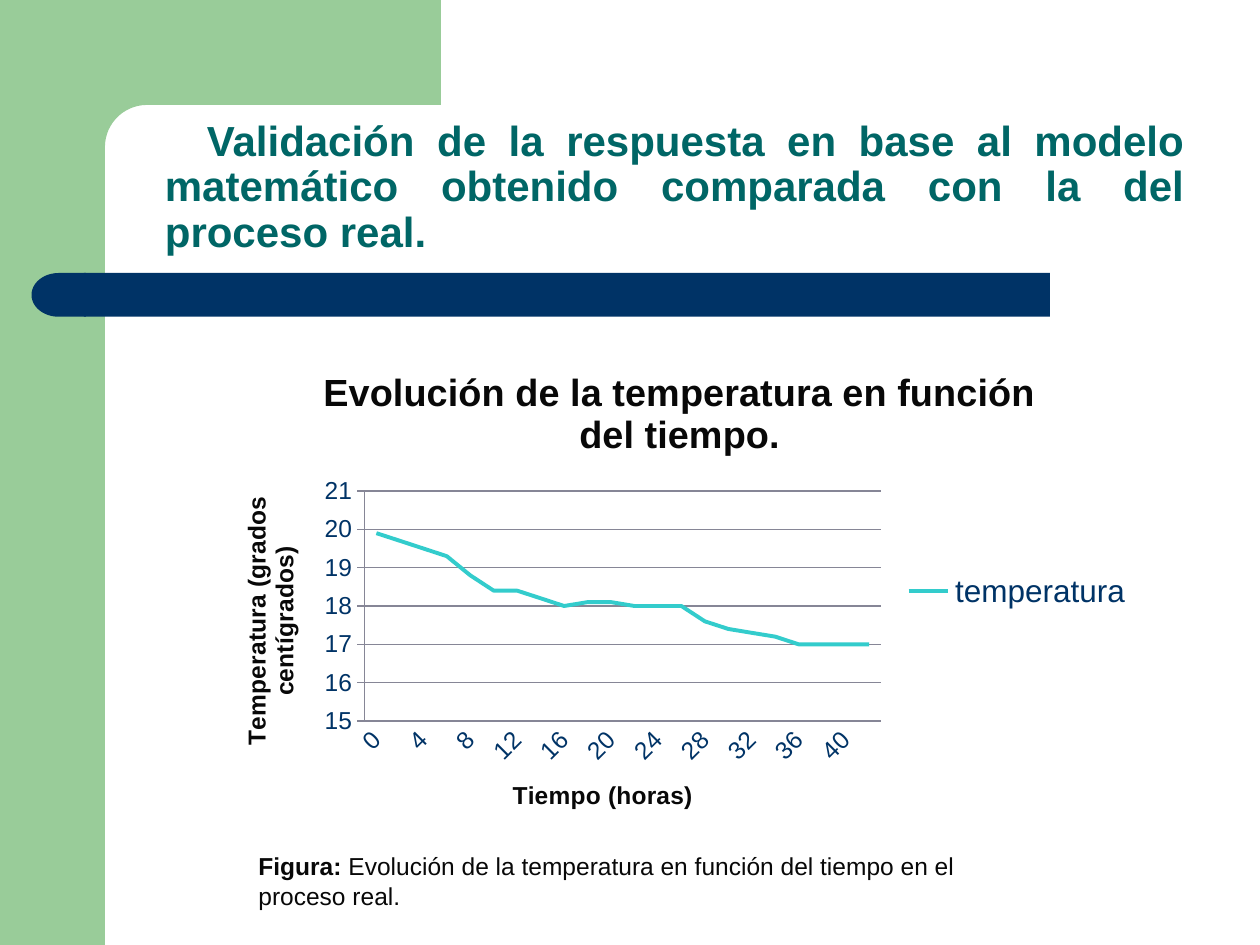
import math

from lxml import etree
from pptx import Presentation
from pptx import util as u
from pptx.chart import data
from pptx.dml.color import RGBColor
from pptx.enum import chart as charts, shapes, text
from pptx.oxml.ns import qn

COLORS = {
    "green": "99CC99",
    "navy": "003366",
    "teal": "006666",
    "turquoise": "33CCCC",
    "black": "080808",
    "grid": "868696",
}


class SlideBuilder:
    """Hold the style and the current slide, and add each kind of element."""

    def __init__(self, presentation, font="Arial"):
        self.font = font
        self.slide = presentation.slides.add_slide(presentation.slide_layouts[5])

    def color(self, name):
        return RGBColor.from_string(COLORS[name])

    def style(self, font, size, color, bold=False):
        font.name = self.font
        font.size = u.Pt(size)
        font.bold = bold
        font.color.rgb = self.color(color)

    def add_run(self, paragraph, words, size, color, bold=False):
        run = paragraph.add_run()
        run.text = words
        self.style(run.font, size, color, bold)

    def paint(self, shape, color):
        shape.shadow.inherit = False
        shape.fill.solid()
        shape.fill.fore_color.rgb = self.color(color)
        shape.line.fill.background()

    def block(self, kind, box, color, rotation=0):
        shape = self.slide.shapes.add_shape(kind, *map(u.Pt, box))
        shape.rotation = rotation
        self.paint(shape, color)

    def outline(self, points, color):
        points = [(u.Pt(x), u.Pt(y)) for x, y in points]
        builder = self.slide.shapes.build_freeform(*points[0])
        builder.add_line_segments(points[1:], close=True)
        self.paint(builder.convert_to_shape(), color)

    def title(self, words, box):
        shape = self.slide.shapes.title
        shape.left, shape.top, shape.width, shape.height = map(u.Pt, box)
        geometry = etree.Element(qn("a:prstGeom"), prst="roundRect")
        guides = etree.SubElement(geometry, qn("a:avLst"))
        etree.SubElement(guides, qn("a:gd"), name="adj", fmla="val 21700")
        shape._element.spPr.find(qn("a:xfrm")).addnext(geometry)
        frame = shape.text_frame
        frame.word_wrap = True
        frame.auto_size = text.MSO_AUTO_SIZE.NONE
        frame.vertical_anchor = text.MSO_ANCHOR.BOTTOM
        paragraph = frame.paragraphs[0]
        paragraph.alignment = text.PP_ALIGN.JUSTIFY
        paragraph.line_spacing = 0.9
        properties = paragraph._p.get_or_add_pPr()
        properties.set("marL", str(u.Pt(27)))
        properties.set("indent", str(u.Pt(24)))
        self.add_run(paragraph, words, 24, "teal", True)

    def caption(self, label, words, box):
        shape = self.slide.shapes.add_textbox(*map(u.Pt, box))
        shape.text_frame.word_wrap = True
        paragraph = shape.text_frame.paragraphs[0]
        self.add_run(paragraph, label, 14, "black", True)
        self.add_run(paragraph, words, 14, "black")

    def heading(self, owner, words, size):
        paragraph = owner.text_frame.paragraphs[0]
        self.add_run(paragraph, words, size, "black", True)

    def axis(self, axis, words, tick):
        self.heading(axis.axis_title, words, 14)
        self.style(axis.tick_labels.font, 14, "navy")
        axis.major_tick_mark = tick
        axis.minor_tick_mark = charts.XL_TICK_MARK.NONE
        self.rule(axis.format.line)

    def rule(self, line):
        line.color.rgb = self.color("grid")
        line.width = u.Pt(0.7)

    def line_chart(self, title, name, categories, values, axis_names, box, plot_area):
        chart_data = data.CategoryChartData()
        chart_data.categories = categories
        chart_data.add_series(name, values)
        kind = charts.XL_CHART_TYPE.LINE_STACKED
        chart = self.slide.shapes.add_chart(kind, *map(u.Pt, box), chart_data).chart
        self.style(chart.font, 18, "navy")
        chart.has_title = True
        self.heading(chart.chart_title, title, 21.6)
        chart.chart_title.include_in_layout = False
        chart.has_legend = True
        chart.legend.position = charts.XL_LEGEND_POSITION.RIGHT
        chart.legend.include_in_layout = False
        self.style(chart.legend.font, 18, "navy")

        self.axis(chart.category_axis, axis_names[0], charts.XL_TICK_MARK.NONE)
        category_xml = chart.category_axis._element
        category_xml.find(qn("c:txPr")).find(qn("a:bodyPr")).set("rot", "-2700000")
        skip = etree.Element(qn("c:tickLblSkip"), val="2")
        category_xml.find(qn("c:noMultiLvlLbl")).addprevious(skip)
        self.axis(chart.value_axis, axis_names[1], charts.XL_TICK_MARK.CROSS)
        chart.value_axis.minimum_scale = 15
        chart.value_axis.maximum_scale = 21
        chart.value_axis.major_unit = 1
        chart.value_axis.has_major_gridlines = True
        self.rule(chart.value_axis.major_gridlines.format.line)

        plot = chart.plots[0]
        plot.vary_by_categories = False
        series = plot.series[0]
        series.smooth = False
        series.marker.style = charts.XL_MARKER_STYLE.NONE
        series.format.line.color.rgb = self.color("turquoise")
        series.format.line.width = u.Pt(2.25)
        self.place_plot(chart, plot_area)

    def place_plot(self, chart, plot_area):
        area = chart._chartSpace.find(qn("c:chart")).find(qn("c:plotArea"))
        for old in area.findall(qn("c:layout")):
            area.remove(old)
        layout = etree.Element(qn("c:layout"))
        manual = etree.SubElement(layout, qn("c:manualLayout"))
        settings = {"layoutTarget": "inner", "xMode": "edge", "yMode": "edge"}
        settings.update(zip("xywh", plot_area))
        for key, value in settings.items():
            etree.SubElement(manual, qn("c:" + key), val=str(value))
        area.insert(0, layout)


def main():
    presentation = Presentation()
    presentation.slide_width, presentation.slide_height = u.Pt(720), u.Pt(540)
    builder = SlideBuilder(presentation)
    kinds = shapes.MSO_SHAPE

    builder.block(kinds.RECTANGLE, (0, 0, 60, 540), "green")
    radius = 24
    angles = [math.radians(degrees) for degrees in range(0, 91, 6)]
    corner = [
        (60 + radius * (1 - math.sin(angle)), 60 + radius * (1 - math.cos(angle)))
        for angle in angles
    ]
    builder.outline(
        [(252, 0), (252, 60), *corner, (60, 92), (36, 92), (36, 0)], "green"
    )
    builder.block(kinds.RECTANGLE, (48, 156, 552, 25), "navy")
    builder.block(kinds.FLOWCHART_DELAY, (18, 156, 31, 25), "navy", 180)

    builder.title(
        "Validación de la respuesta en base al modelo matemático obtenido "
        "comparada con la del proceso real.",
        (60, 37.5, 624, 112.5),
    )
    chart_width, chart_height = 532.8, 282.2
    builder.line_chart(
        "Evolución de la temperatura en función del tiempo.",
        "temperatura",
        [str(hour) for hour in range(0, 43, 2)],
        [19.9, 19.7, 19.5, 19.3, 18.8, 18.4, 18.4, 18.2, 18, 18.1, 18.1]
        + [18, 18, 18, 17.6, 17.4, 17.3, 17.2, 17, 17, 17, 17],
        ("Tiempo (horas)", "Temperatura (grados centígrados)"),
        (122, 196.6, chart_width, chart_height),
        (86.4 / chart_width, 84 / chart_height, 295 / chart_width, 131.5 / chart_height),
    )
    builder.caption(
        "Figura:",
        " Evolución de la temperatura en función del tiempo en el proceso real.",
        (140.6, 483, 448, 42),
    )
    presentation.save("out.pptx")


if __name__ == "__main__":
    main()
